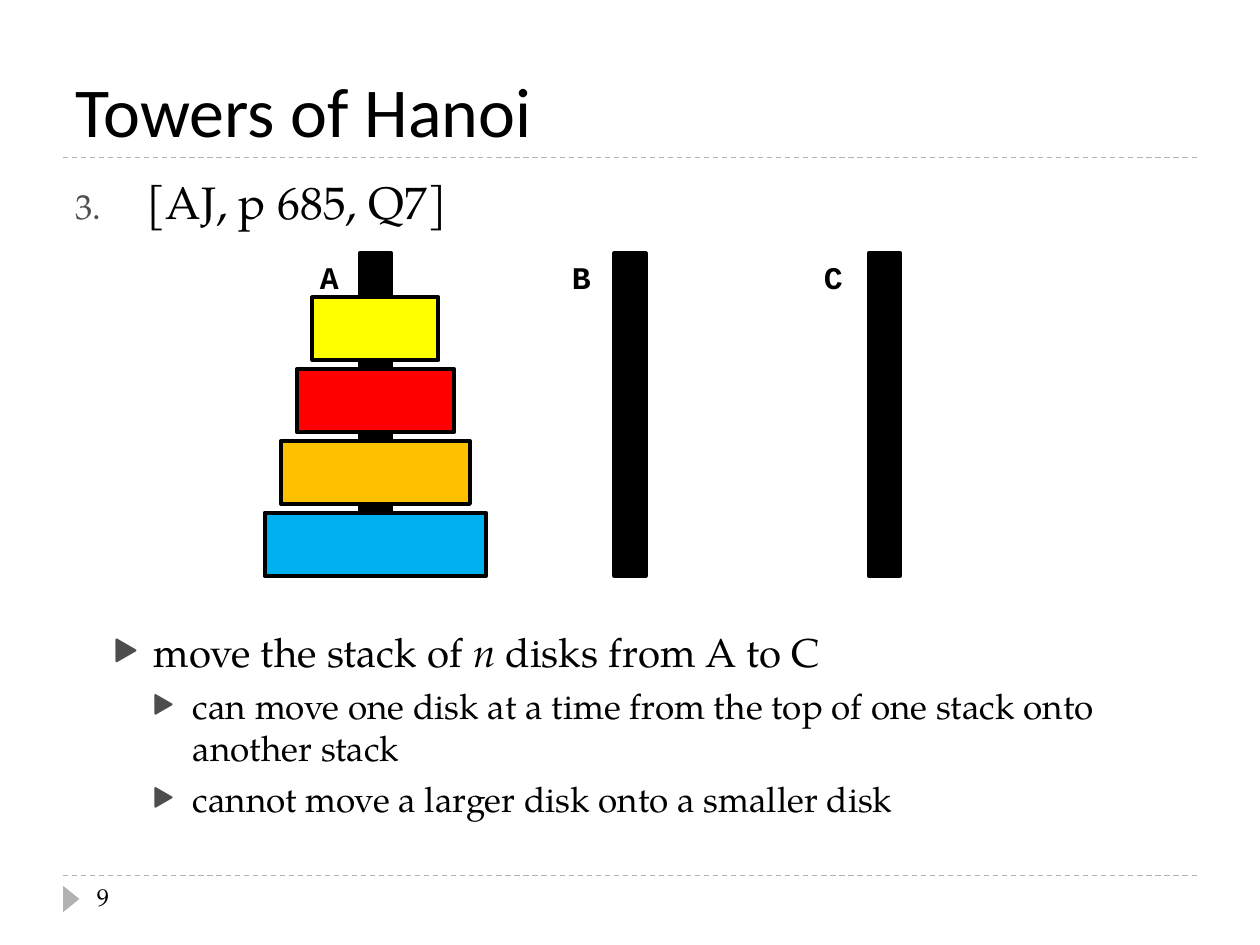
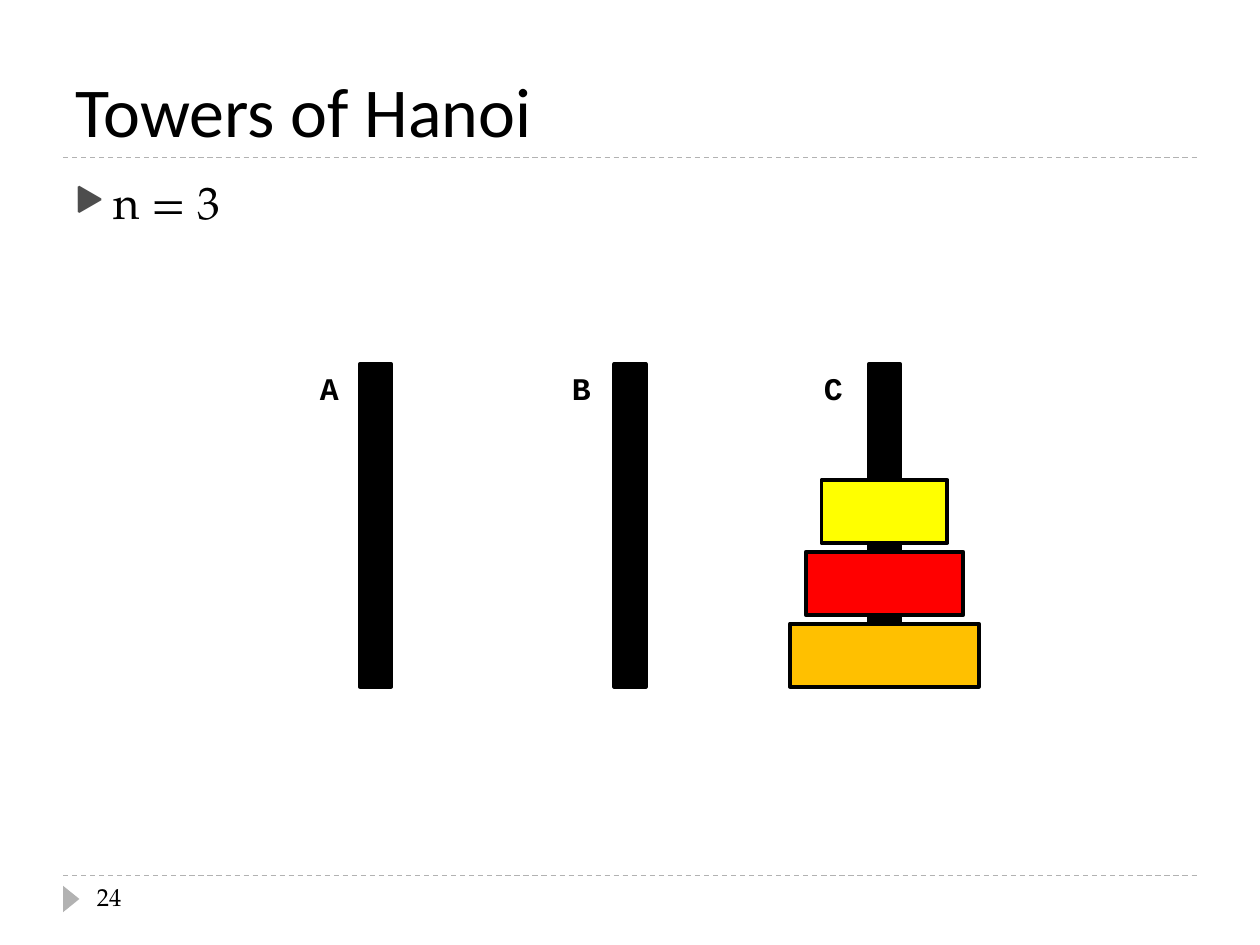
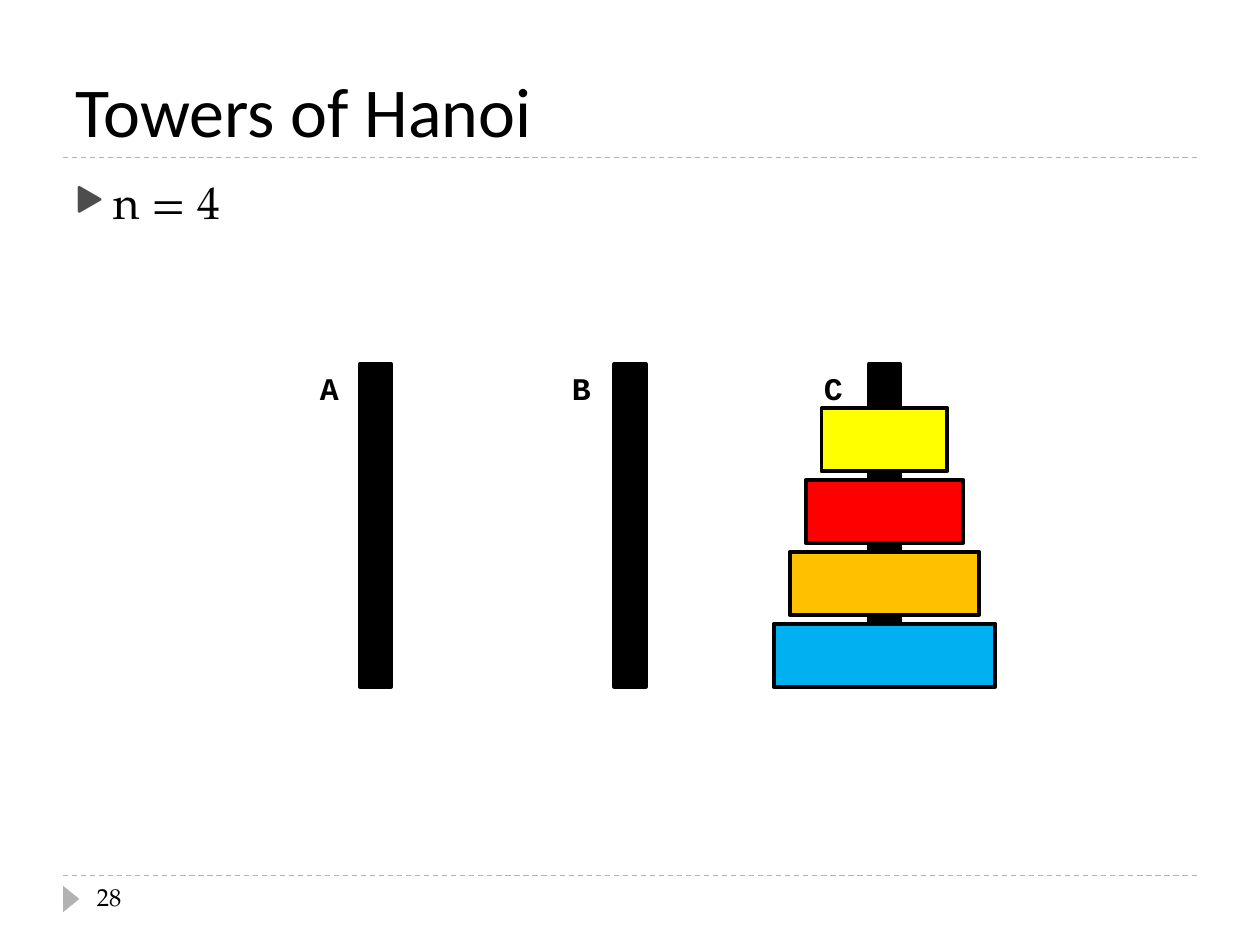
import dataclasses

import lxml.etree
import pptx
import pptx.dml.color
import pptx.enum.dml
import pptx.enum.shapes
import pptx.enum.text
import pptx.oxml.ns
import pptx.util

Inches = pptx.util.Inches
Pt = pptx.util.Pt
MSO_SHAPE = pptx.enum.shapes.MSO_SHAPE
MSO_AUTO_SIZE = pptx.enum.text.MSO_AUTO_SIZE


@dataclasses.dataclass(frozen=True)
class Theme:
    title_font: str = "Calibri"
    body_font: str = "TeX Gyre Pagella"
    label_font: str = "Courier New"
    title_size: int = 40
    level_sizes: tuple = (26, 23, 20)
    label_size: int = 18
    number_size: int = 14
    ink: str = "000000"
    rule: str = "B2B2B2"
    bullet: str = "4D4D4D"
    yellow: str = "FFFF00"
    red: str = "FF0000"
    orange: str = "FFC000"
    blue: str = "00B0F0"


THEME = Theme()

# Disks from smallest to largest: width in inches and colour
DISKS = [(1, THEME.yellow), (1.25, THEME.red), (1.5, THEME.orange), (1.76, THEME.blue)]
DISK_HEIGHT, DISK_PITCH = 0.5, 0.57
POLES = "ABC"
POLE_WIDTH, POLE_HEIGHT = 0.25, 2.56
FIRST_POLE_CENTRE, POLE_PITCH = 2.98, 2.02
FIRST_LABEL_LEFT, LABEL_PITCH = 2.44, 2


@dataclasses.dataclass(frozen=True)
class Item:
    """A list entry; text between asterisks is italic, lengths are inches and points."""
    text: str
    level: int = 0
    indent: float = 0.3
    hanging: float = 0.3
    space_before: int = 6
    start_number: int = 0


def rgb(colour):
    return pptx.dml.color.RGBColor.from_string(colour)


def inches(*lengths):
    return [Inches(length) for length in lengths]


class Deck:
    def __init__(self, theme):
        self.theme = theme
        self.presentation = pptx.Presentation()
        self.presentation.slide_width, self.presentation.slide_height = inches(10, 7.5)
        self.slide = None

    def add_slide(self, title, number):
        layout = self.presentation.slide_layouts[1]
        self.slide = self.presentation.slides.add_slide(layout)
        self.rule(6.95)
        self.rule(1.25)
        marker = self.shape(MSO_SHAPE.ISOSCELES_TRIANGLE, 0.46, 7.07, 0.21, 0.13, self.theme.rule)
        marker.rotation = 90
        self.title(title)
        self.text(str(number), 0.67, 6.95, 2.17, 0.4, self.theme.body_font, self.theme.number_size)

    def format_runs(self, paragraph, font, size):
        for run in paragraph.runs:
            run.font.name = font
            run.font.size = Pt(size)
            run.font.color.rgb = rgb(self.theme.ink)

    def place(self, shape, left, top, width, height):
        shape.left, shape.top, shape.width, shape.height = inches(left, top, width, height)

    def title(self, text):
        title = self.slide.shapes.title
        self.place(title, 0.5, 0.17, 9, 1.08)
        frame = title.text_frame
        frame.text = text
        frame.auto_size = MSO_AUTO_SIZE.NONE
        frame.vertical_anchor = pptx.enum.text.MSO_ANCHOR.BOTTOM
        paragraph = frame.paragraphs[0]
        paragraph.alignment = pptx.enum.text.PP_ALIGN.LEFT
        self.format_runs(paragraph, self.theme.title_font, self.theme.title_size)

    def items(self, items):
        body = self.slide.placeholders[1]
        self.place(body, 0.5, 1.33, 9, 5.4)
        frame = body.text_frame
        frame.auto_size = MSO_AUTO_SIZE.NONE
        for index, item in enumerate(items):
            paragraph = frame.add_paragraph() if index else frame.paragraphs[0]
            paragraph.level = item.level
            paragraph.space_before = Pt(item.space_before)
            for part_index, part in enumerate(item.text.split("*")):
                run = paragraph.add_run()
                run.text = part
                run.font.italic = part_index % 2 == 1
            self.format_runs(paragraph, self.theme.body_font, self.theme.level_sizes[item.level])
            self.bullet(paragraph, item)

    def bullet(self, paragraph, item):
        properties = paragraph._p.get_or_add_pPr()
        properties.set("marL", str(Inches(item.indent)))
        properties.set("indent", str(-Inches(item.hanging)))

        def add(parent, tag, **attributes):
            return lxml.etree.SubElement(parent, pptx.oxml.ns.qn(tag), attributes)

        add(add(properties, "a:buClr"), "a:srgbClr", val=self.theme.bullet)
        add(properties, "a:buSzPct", val="76000")
        add(properties, "a:buFont", typeface=self.theme.body_font)
        if item.start_number:
            add(properties, "a:buAutoNum", type="arabicPeriod", startAt=str(item.start_number))
        else:
            add(properties, "a:buChar", char="▶")

    def text(self, text, left, top, width, height, font, size, bold=False, wrap=True):
        box = self.slide.shapes.add_textbox(*inches(left, top, width, height))
        frame = box.text_frame
        frame.text = text
        frame.word_wrap = wrap
        frame.auto_size = MSO_AUTO_SIZE.NONE if wrap else MSO_AUTO_SIZE.SHAPE_TO_FIT_TEXT
        paragraph = frame.paragraphs[0]
        self.format_runs(paragraph, font, size)
        paragraph.runs[0].font.bold = bold

    def rule(self, top):
        """Draw a dashed line across the slide."""
        line = self.slide.shapes.add_connector(
            pptx.enum.shapes.MSO_CONNECTOR.STRAIGHT, *inches(0.5, top, 9.5, top))
        line.line.color.rgb = rgb(self.theme.rule)
        line.line.width = Pt(0.75)
        line.line.dash_style = pptx.enum.dml.MSO_LINE.DASH
        lxml.etree.SubElement(line._element.spPr, pptx.oxml.ns.qn("a:effectLst"))

    def shape(self, kind, left, top, width, height, fill, outline=None):
        shape = self.slide.shapes.add_shape(kind, *inches(left, top, width, height))
        shape.shadow.inherit = False
        shape.fill.solid()
        shape.fill.fore_color.rgb = rgb(fill)
        if outline:
            shape.line.color.rgb = rgb(outline)
            shape.line.width = Pt(2.25)
        else:
            shape.line.fill.background()
        return shape

    def block(self, centre, top, width, height, fill):
        """Draw an outlined rectangle centred on a pole."""
        self.shape(MSO_SHAPE.RECTANGLE, centre - width / 2, top, width, height,
                   fill, self.theme.ink)

    def towers(self, top, disk_count, stacked_pole):
        """Draw the three poles, with the smallest disks stacked on one of them."""
        centres = [FIRST_POLE_CENTRE + index * POLE_PITCH for index in range(len(POLES))]
        for centre in centres:
            self.block(centre, top, POLE_WIDTH, POLE_HEIGHT, self.theme.ink)
        lowest_top = top + POLE_HEIGHT - DISK_HEIGHT
        stack_centre = centres[POLES.index(stacked_pole)]
        for level, (width, colour) in enumerate(reversed(DISKS[:disk_count])):
            self.block(stack_centre, lowest_top - level * DISK_PITCH, width, DISK_HEIGHT, colour)
        for index, pole in enumerate(POLES):
            self.text(pole, FIRST_LABEL_LEFT + index * LABEL_PITCH, top - 0.01, 0.35, 0.4,
                      self.theme.label_font, self.theme.label_size, bold=True, wrap=False)


def main():
    deck = Deck(THEME)
    heading = "Towers of Hanoi"

    deck.add_slide(heading, 9)
    rule_style = dict(level=2, indent=0.93, hanging=0.32, space_before=5)
    deck.items([
        Item("[AJ, p 685, Q7]", indent=0.56, hanging=0.56, start_number=3),
        # The large space leaves room for the towers
        Item("move the stack of *n* disks from A to C", level=1, indent=0.62, hanging=0.32,
             space_before=228),
        Item("can move one disk at a time from the top of one stack onto another stack",
             **rule_style),
        Item("cannot move a larger disk onto a smaller disk", **rule_style),
    ])
    deck.towers(2.01, disk_count=4, stacked_pole="A")

    for number, disk_count in [(24, 3), (28, 4)]:
        deck.add_slide(heading, number)
        deck.items([Item(f"n = {disk_count}")])
        deck.towers(2.89, disk_count, stacked_pole="C")

    deck.presentation.save("out.pptx")


if __name__ == "__main__":
    main()
